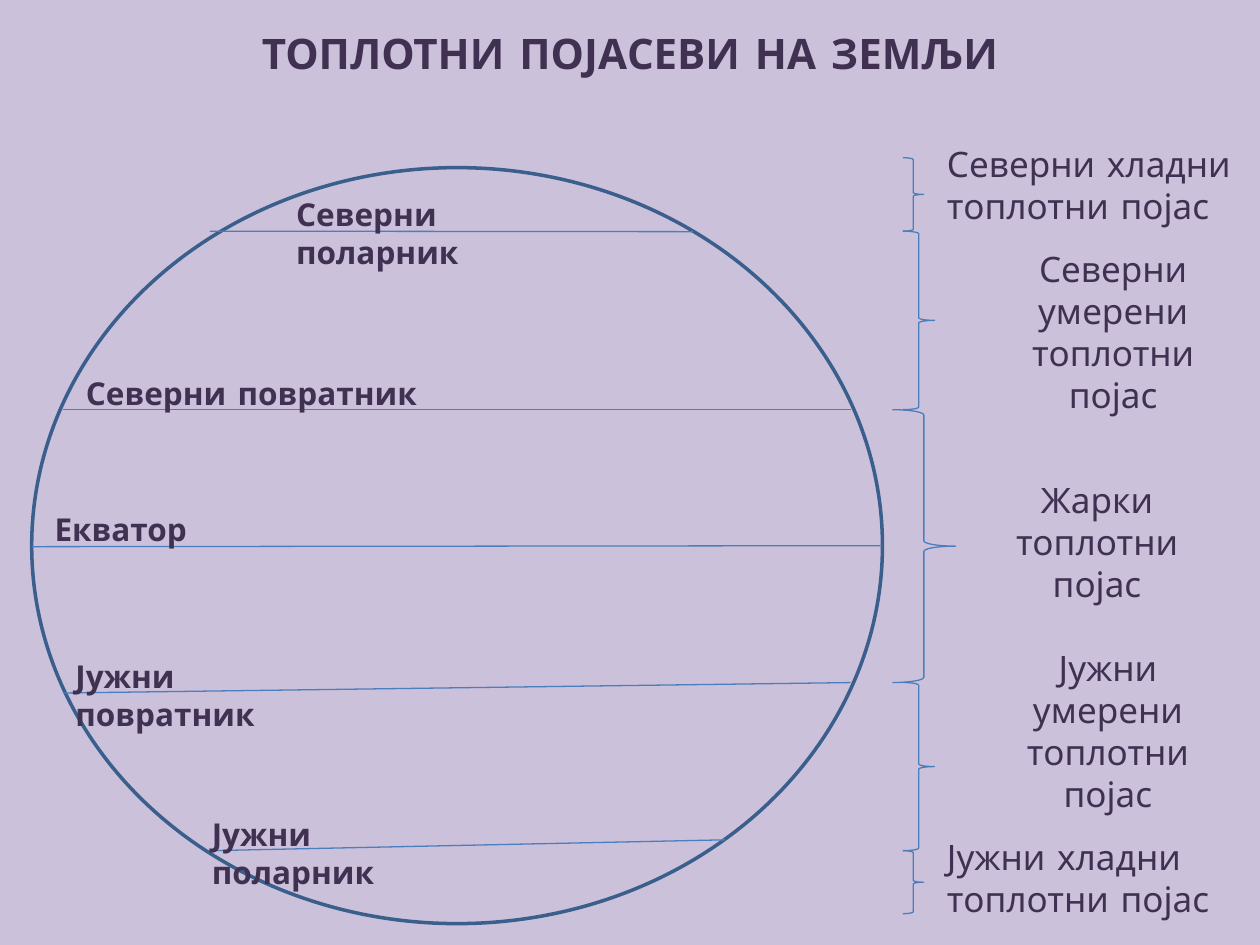
from dataclasses import dataclass

from lxml.etree import SubElement
from pptx import Presentation
from pptx.dml.color import RGBColor
from pptx.enum.shapes import MSO_CONNECTOR, MSO_SHAPE
from pptx.enum.text import MSO_ANCHOR, MSO_AUTO_SIZE, PP_ALIGN
from pptx.oxml.ns import qn
from pptx.util import Cm, Pt

FONT = "Comic Neue"
PAPER, INK, RIM, THIN = "CCC1DA", "403152", "3A5F8C", "4B7EBC"


@dataclass
class Circle:
    """A parallel on the globe and its label; lengths in cm."""
    name: str
    start: tuple[float, float]
    end: tuple[float, float]
    left: float
    top: float
    width: float


@dataclass
class Zone:
    """A heat zone: its brace and its label; lengths in cm."""
    lines: list[str]
    depth: float
    box: tuple[float, float, float, float]
    align: PP_ALIGN = PP_ALIGN.CENTER


CIRCLES = [
    Circle("Северни поларник", (4.23, 4.66), (13.97, 4.67), 5.72, 3.81, 6.32),
    Circle("Северни повратник", (1.27, 8.26), (17.15, 8.26), 1.48, 7.41, 7.41),
    Circle("Екватор", (0.64, 11.02), (17.78, 11), 0.85, 10.16, 6.99),
    Circle("Јужни повратник", (1.27, 13.97), (17.15, 13.76), 1.27, 13.12, 6),
    Circle("Јужни поларник", (4.23, 17.15), (14.61, 16.93), 4.02, 16.3, 5.77),
]
ZONES = [
    Zone(["Северни хладни", "топлотни појас"], 0.42,
         (18.84, 2.75, 6.56, 1.95), PP_ALIGN.LEFT),
    Zone(["Северни умерени топлотни појас"], 0.64, (20.11, 4.87, 4.66, 3.68)),
    Zone(["Жарки топлотни појас"], 1.27, (19.47, 9.53, 5.29, 2.82)),
    Zone(["Јужни умерени топлотни појас"], 0.64, (20.11, 12.91, 4.45, 3.68)),
    Zone(["Јужни хладни", "топлотни појас"], 0.42,
         (18.84, 16.72, 6.56, 1.95), PP_ALIGN.LEFT),
]
EDGES = [3.18, 4.66, 8.26, 13.76, 17.15, 18.42]  # zone limits, north to south


def color(code: str) -> RGBColor:
    return RGBColor.from_string(code)


def stroke(line, code: str, width: float) -> None:
    line.color.rgb = color(code)
    line.width = Pt(width)


def outline(slide, kind: MSO_SHAPE, box: tuple, code: str, width: float) -> None:
    shape = slide.shapes.add_shape(kind, *map(Cm, box))
    shape.shadow.inherit = False
    shape.fill.background()
    stroke(shape.line, code, width)


def draw_line(slide, start: tuple, end: tuple) -> None:
    line = slide.shapes.add_connector(
        MSO_CONNECTOR.STRAIGHT, *map(Cm, start + end))
    stroke(line.line, THIN, 0.75)
    SubElement(line._element.spPr, qn("a:effectLst"))


def write(frame, lines: list[str], size: int, bold: bool, align: PP_ALIGN) -> None:
    frame.word_wrap = True
    frame.vertical_anchor = MSO_ANCHOR.TOP
    frame.text = "\n".join(lines)
    for para in frame.paragraphs:
        para.alignment = align
        para.font.name = FONT
        para.font.size = Pt(size)
        para.font.bold = bold
        para.font.color.rgb = color(INK)


def label(slide, box: tuple, lines: list[str], size: int, bold: bool,
          align: PP_ALIGN) -> None:
    frame = slide.shapes.add_textbox(*map(Cm, box)).text_frame
    write(frame, lines, size, bold, align)
    frame.auto_size = MSO_AUTO_SIZE.SHAPE_TO_FIT_TEXT


def main() -> None:
    deck = Presentation()
    deck.slide_width, deck.slide_height = Cm(25.4), Cm(19.05)
    slide = deck.slides.add_slide(deck.slide_layouts[5])
    slide.background.fill.solid()
    slide.background.fill.fore_color.rgb = color(PAPER)

    # Title
    title = slide.shapes.title
    title.left, title.top, title.width, title.height = map(
        Cm, (0, 0.42, 25.4, 1.28))
    write(title.text_frame, ["ТОПЛОТНИ ПОЈАСЕВИ НА ЗЕМЉИ"], 24, True,
          PP_ALIGN.CENTER)
    title.text_frame.auto_size = MSO_AUTO_SIZE.NONE

    # Globe with its parallels
    outline(slide, MSO_SHAPE.FLOWCHART_CONNECTOR,
            (0.64, 3.38, 17.15, 15.24), RIM, 2)
    for ring in CIRCLES:
        draw_line(slide, ring.start, ring.end)
        label(slide, (ring.left, ring.top, ring.width, 1.03), [ring.name],
              18, True, PP_ALIGN.LEFT)

    # Heat zones: each brace spans two neighbouring limits
    for zone, top, low in zip(ZONES, EDGES, EDGES[1:]):
        left = 17.99 if zone.depth > 1 else 18.2
        outline(slide, MSO_SHAPE.RIGHT_BRACE,
                (left, top, zone.depth, low - top), THIN, 0.75)
        label(slide, zone.box, zone.lines, 20, False, zone.align)

    deck.save("out.pptx")


if __name__ == "__main__":
    main()
